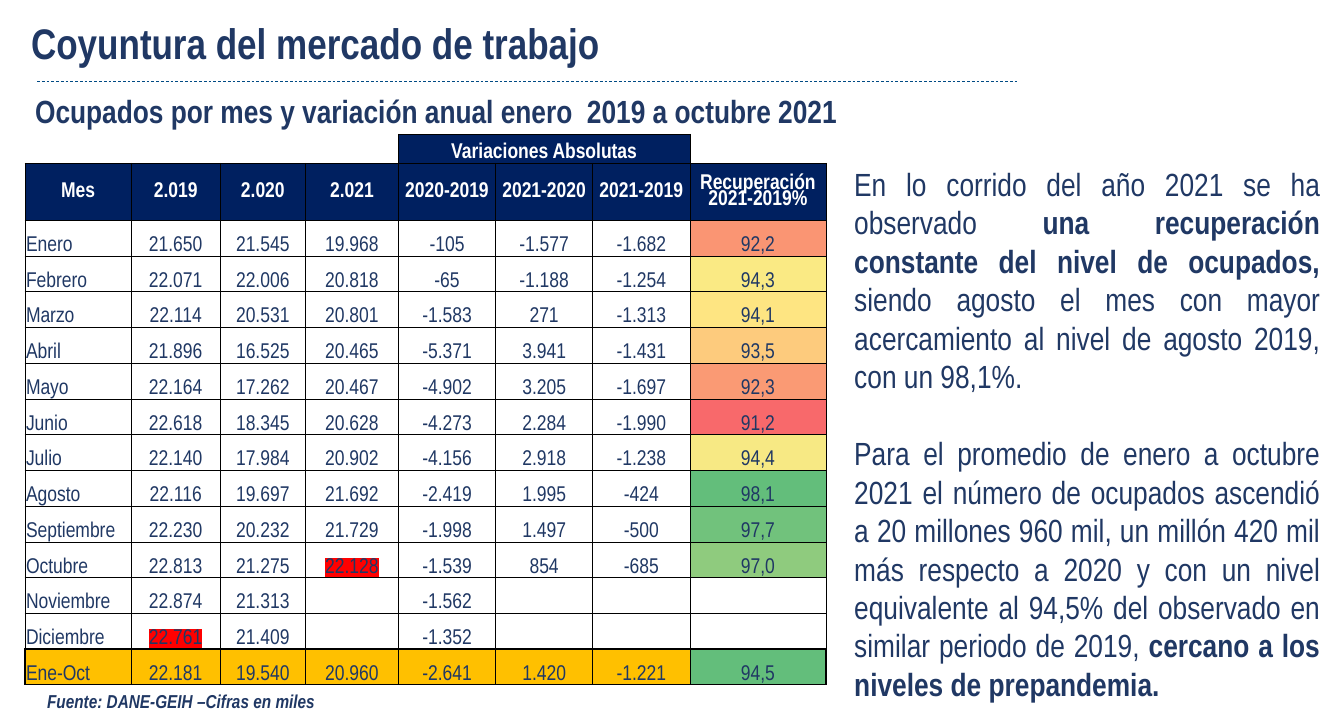
import pptx
import pptx.util
import pptx.dml.color
import pptx.enum.dml
import pptx.enum.shapes
import pptx.enum.text
import pptx.oxml
import pptx.oxml.ns
from lxml import etree

ALIGN = pptx.enum.text.PP_ALIGN
ANCHOR = pptx.enum.text.MSO_ANCHOR
FONT = "Arial Narrow"
NAVY, HEADER, WHITE, GOLD, RED = "203864", "002060", "FFFFFF", "FFC000", "FF0000"
BOX_INSETS = (10, 5, 10, 5)
CELL_INSETS = (1, 1, 1, 0)

COLUMN_WIDTHS = [106, 89, 85, 93, 97, 97, 97, 136]
HEADINGS = ["Mes", "2.019", "2.020", "2.021", "2020-2019", "2021-2020", "2021-2019",
            "Recuperación 2021-2019%"]
MONTHS = [
    ("Enero", "21.650", "21.545", "19.968", "-105", "-1.577", "-1.682", "92,2"),
    ("Febrero", "22.071", "22.006", "20.818", "-65", "-1.188", "-1.254", "94,3"),
    ("Marzo", "22.114", "20.531", "20.801", "-1.583", "271", "-1.313", "94,1"),
    ("Abril", "21.896", "16.525", "20.465", "-5.371", "3.941", "-1.431", "93,5"),
    ("Mayo", "22.164", "17.262", "20.467", "-4.902", "3.205", "-1.697", "92,3"),
    ("Junio", "22.618", "18.345", "20.628", "-4.273", "2.284", "-1.990", "91,2"),
    ("Julio", "22.140", "17.984", "20.902", "-4.156", "2.918", "-1.238", "94,4"),
    ("Agosto", "22.116", "19.697", "21.692", "-2.419", "1.995", "-424", "98,1"),
    ("Septiembre", "22.230", "20.232", "21.729", "-1.998", "1.497", "-500", "97,7"),
    ("Octubre", "22.813", "21.275", "22.128", "-1.539", "854", "-685", "97,0"),
    ("Noviembre", "22.874", "21.313", "", "-1.562", "", "", ""),
    ("Diciembre", "22.761", "21.409", "", "-1.352", "", "", ""),
    ("Ene-Oct", "22.181", "19.540", "20.960", "-2.641", "1.420", "-1.221", "94,5"),
]
RECOVERY_FILLS = ["FA9573", "FAEA84", "FEE582", "FDCB7D", "FA9A74", "F8696B", "F7E984",
                  "63BE7B", "71C27C", "8FCB7E", WHITE, WHITE, "63BE7B"]
HIGHLIGHTED = {"22.128", "22.761"}
COMMENTARY = (
    "En lo corrido del año 2021 se ha observado **una recuperación constante del nivel de "
    "ocupados, **siendo agosto el mes con mayor acercamiento al nivel de agosto 2019, con un "
    "98,1%.\n"
    "Para el promedio de enero a octubre 2021 el número de ocupados ascendió a 20 millones "
    "960 mil, un millón 420 mil más respecto a 2020 y con un nivel equivalente al 94,5% del "
    "observado en similar periodo de 2019, **cercano a los niveles de prepandemia."
)


def px(length):
    return pptx.util.Emu(length * 9525)


def rgb(value):
    return pptx.dml.color.RGBColor.from_string(value)


def qn(tag):
    return pptx.oxml.ns.qn(tag)


def write(frame, text, *, size, color=NAVY, bold=False, italic=False, align=ALIGN.LEFT,
          anchor=ANCHOR.TOP, insets=BOX_INSETS, highlight=None, gap=0, line_spacing=None):
    frame.margin_left, frame.margin_top, frame.margin_right, frame.margin_bottom = map(px, insets)
    frame.vertical_anchor = anchor
    for index, content in enumerate(text.split("\n")):
        paragraph = frame.add_paragraph() if index else frame.paragraphs[0]
        paragraph.alignment = align
        if index:
            paragraph.space_before = pptx.util.Pt(gap)
        if line_spacing:
            paragraph.line_spacing = line_spacing
        if not content:
            etree.SubElement(paragraph._p, qn("a:endParaRPr"), sz=str(size * 100))
            continue
        for position, part in enumerate(content.split("**")):
            run = paragraph.add_run()
            run.text = part
            font = run.font
            font.size, font.name = pptx.util.Pt(size), FONT
            font.bold, font.italic = bold or position % 2 == 1, italic
            font.color.rgb = rgb(color)
            if highlight:
                mark = etree.Element(qn("a:highlight"))
                etree.SubElement(mark, qn("a:srgbClr"), val=highlight)
                run._r.rPr.find(qn("a:solidFill")).addnext(mark)


def add_text(slide, box, text, wrap=True, **text_format):
    frame = slide.shapes.add_textbox(*map(px, box)).text_frame
    frame.word_wrap = wrap
    write(frame, text, **text_format)


def add_title(slide, box, text, **text_format):
    title = slide.shapes.title
    title.left, title.top, title.width, title.height = map(px, box)
    title.text_frame.auto_size = pptx.enum.text.MSO_AUTO_SIZE.NONE
    write(title.text_frame, text, **text_format)


def add_rule(slide, left, right, y):
    rule = slide.shapes.add_connector(
        pptx.enum.shapes.MSO_CONNECTOR.STRAIGHT, px(left), px(y), px(right), px(y))
    rule.line.color.rgb = rgb("004A84")
    rule.line.width = pptx.util.Pt(0.5)
    rule.line.dash_style = pptx.enum.dml.MSO_LINE.DASH
    etree.SubElement(rule._element.spPr, qn("a:effectLst"))


def set_borders(cell, widths):
    properties = cell._tc.get_or_add_tcPr()
    for side in "LRTB":
        width = widths.get(side, 0)
        edge = etree.SubElement(properties, qn(f"a:ln{side}"), w=str(int(width * 12700)))
        if width:
            fill = etree.SubElement(edge, qn("a:solidFill"))
            etree.SubElement(fill, qn("a:srgbClr"), val="000000")
        else:
            etree.SubElement(edge, qn("a:noFill"))


def fill_cell(cell, text, fill, borders, **text_format):
    set_borders(cell, borders)
    cell.fill.solid()
    cell.fill.fore_color.rgb = rgb(fill)
    write(cell.text_frame, text, size=16, insets=CELL_INSETS, **text_format)
    cell.vertical_anchor = text_format["anchor"]
    cell.margin_left, cell.margin_top, cell.margin_right, cell.margin_bottom = map(px, CELL_INSETS)


def add_employment_table(slide, left, top):
    last_row, last_column = len(MONTHS) + 1, len(HEADINGS) - 1
    table = slide.shapes.add_table(last_row + 1, last_column + 1, px(left), px(top),
                                   px(sum(COLUMN_WIDTHS)), px(550)).table
    table.first_row = table.horz_banding = False
    for column, width in zip(table.columns, COLUMN_WIDTHS):
        column.width = px(width)
    month_height = px(464) // len(MONTHS)
    for row, height in zip(table.rows, [px(29), px(57)] + [month_height] * len(MONTHS)):
        row.height = height

    thin = dict.fromkeys("LRTB", 0.5)
    heading_format = dict(color=WHITE, bold=True, align=ALIGN.CENTER)
    for c, heading in enumerate(HEADINGS):
        in_group = 4 <= c <= 6
        open_edges = {"B": 0.5} | ({"R": 0.5} if c == 3 else {"L": 0.5} if c == 7 else {})
        fill_cell(table.cell(0, c), "Variaciones Absolutas" if c == 4 else "",
                  HEADER if in_group else WHITE, thin if in_group else open_edges,
                  anchor=ANCHOR.BOTTOM, **heading_format)
        fill_cell(table.cell(1, c), heading, HEADER, thin, anchor=ANCHOR.MIDDLE,
                  line_spacing=0.8 if c == last_column else None, **heading_format)
    table.cell(0, 4).merge(table.cell(0, 6))

    for r, (month, recovery_fill) in enumerate(zip(MONTHS, RECOVERY_FILLS), start=2):
        total = r == last_row
        for c, value in enumerate(month):
            borders = dict(thin)
            if r >= last_row - 1:
                borders["B"] = 1
            if total:
                borders["T"] = 1
                borders["L"] = 1 if c == 0 else 0.5
                borders["R"] = 1 if c == last_column else 0.5
            fill = recovery_fill if c == last_column else GOLD if total else WHITE
            fill_cell(table.cell(r, c), value, fill, borders, anchor=ANCHOR.BOTTOM,
                      align=ALIGN.CENTER if c else ALIGN.LEFT,
                      highlight=RED if value in HIGHLIGHTED else None)


def main():
    deck = pptx.Presentation()
    deck.slide_width, deck.slide_height = px(1342), px(720)
    slide = deck.slides.add_slide(deck.slide_layouts[5])
    add_title(slide, (21, 12, 900, 61), "Coyuntura del mercado de trabajo", size=32, bold=True)
    add_rule(slide, 37, 1017, 81)
    add_text(slide, (25, 86, 1050, 48),
             "Ocupados por mes y variación anual enero  2019 a octubre 2021", size=24, bold=True)
    add_employment_table(slide, 25, 134)
    add_text(slide, (37, 684, 290, 33), "Fuente: DANE-GEIH –Cifras en miles", wrap=False,
             size=14, bold=True, italic=True)
    add_text(slide, (843, 159, 485, 553), COMMENTARY, size=24, align=ALIGN.JUSTIFY, gap=29)
    deck.save("out.pptx")


if __name__ == "__main__":
    main()
